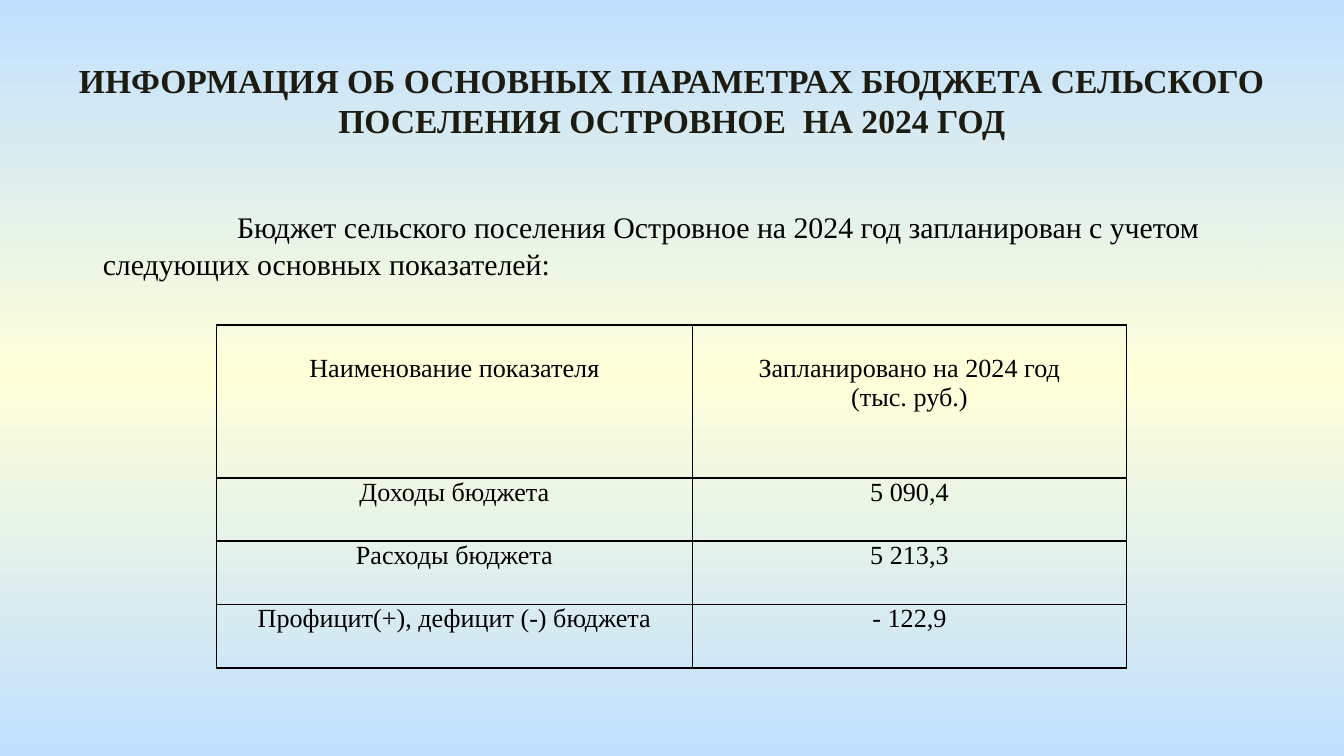
"""Build a slide with the main budget figures of a rural settlement for 2024."""
from copy import deepcopy

from lxml import etree
from pptx import Presentation
from pptx.dml.color import RGBColor
from pptx.enum.shapes import MSO_SHAPE
from pptx.enum.text import MSO_ANCHOR, PP_ALIGN
from pptx.oxml.ns import qn
from pptx.util import Pt

LEFT, CENTER = PP_ALIGN.LEFT, PP_ALIGN.CENTER
TOP, MIDDLE = MSO_ANCHOR.TOP, MSO_ANCHOR.MIDDLE
RECTANGLE = MSO_SHAPE.RECTANGLE
FONT = "Times New Roman"
SKY, CREAM, BLACK, DARK = "C1E0FF", "FFFFD9", "000000", "1E1C11"


def rgb(value):
    return RGBColor.from_string(value)


def write(frame, text, size=14, color=BLACK, bold=False, align=CENTER, spacing=None, indent=0):
    frame.word_wrap = True
    for index, line in enumerate(text.split("\n")):
        paragraph = frame.add_paragraph() if index else frame.paragraphs[0]
        paragraph.alignment = align
        if spacing:
            paragraph.line_spacing = Pt(spacing)
        if indent:
            paragraph._p.get_or_add_pPr().set("indent", str(Pt(indent)))
        run = paragraph.add_run()
        run.text = line
        run.font.name = FONT
        run.font.size = Pt(size)
        run.font.bold = bold
        run.font.color.rgb = rgb(color)


deck = Presentation()
deck.slide_width, deck.slide_height = Pt(720), Pt(405)
slide = deck.slides.add_slide(deck.slide_layouts[6])

backdrop = slide.background.fill
backdrop.gradient()
backdrop.gradient_angle = 270
stops = next(slide.element.iter(qn("a:gsLst")))
stops.append(deepcopy(stops[0]))
for stop, position, color in zip(backdrop.gradient_stops, (0, 0.5, 1), (SKY, CREAM, SKY)):
    stop.position = position
    stop.color.rgb = rgb(color)

intro = slide.shapes.add_shape(RECTANGLE, Pt(48), Pt(105), Pt(629), Pt(48))
intro.shadow.inherit = False
intro.line.fill.background()
intro.element.set("useBgFill", "1")
intro.text_frame.vertical_anchor = TOP
intro.text_frame.margin_top = Pt(6)
write(
    intro.text_frame,
    "Бюджет сельского поселения Островное на 2024 год запланирован с учетом "
    "следующих основных показателей:",
    size=16, align=LEFT, spacing=20, indent=72,
)

title = slide.shapes.add_textbox(Pt(25), Pt(28), Pt(670), Pt(51))
title.text_frame.vertical_anchor = MIDDLE
write(
    title.text_frame,
    "ИНФОРМАЦИЯ ОБ ОСНОВНЫХ ПАРАМЕТРАХ БЮДЖЕТА СЕЛЬСКОГО "
    "ПОСЕЛЕНИЯ ОСТРОВНОЕ  НА 2024 ГОД",
    size=18, color=DARK, bold=True,
)

indicators = [
    ("Наименование показателя", "Запланировано на 2024 год\n(тыс. руб.)"),
    ("Доходы бюджета", "5 090,4"),
    ("Расходы бюджета", "5 213,3"),
    ("Профицит(+), дефицит (-) бюджета", "- 122,9"),
]
column_widths = (255, 232.5)
row_heights = (82, 34, 34, 34)
budget = slide.shapes.add_table(
    len(indicators), len(column_widths),
    Pt(116), Pt(174), Pt(sum(column_widths)), Pt(sum(row_heights)),
).table
budget.first_row = budget.horz_banding = False
for column, width in zip(budget.columns, column_widths):
    column.width = Pt(width)
for row_index, (row, height) in enumerate(zip(budget.rows, row_heights)):
    row.height = Pt(height)
    for cell, text in zip(row.cells, indicators[row_index]):
        cell.margin_left = cell.margin_right = Pt(5)
        cell.margin_top = Pt(0 if row_index else 16)
        cell.margin_bottom = Pt(0)
        cell.vertical_anchor = TOP
        write(cell.text_frame, text)
        properties = cell._tc.get_or_add_tcPr()
        for side in ("a:lnL", "a:lnR", "a:lnT", "a:lnB"):
            border = etree.SubElement(properties, qn(side), w=str(Pt(1)))
            paint = etree.SubElement(border, qn("a:solidFill"))
            etree.SubElement(paint, qn("a:srgbClr"), val=BLACK)
        cell.fill.background()

deck.save("out.pptx")
